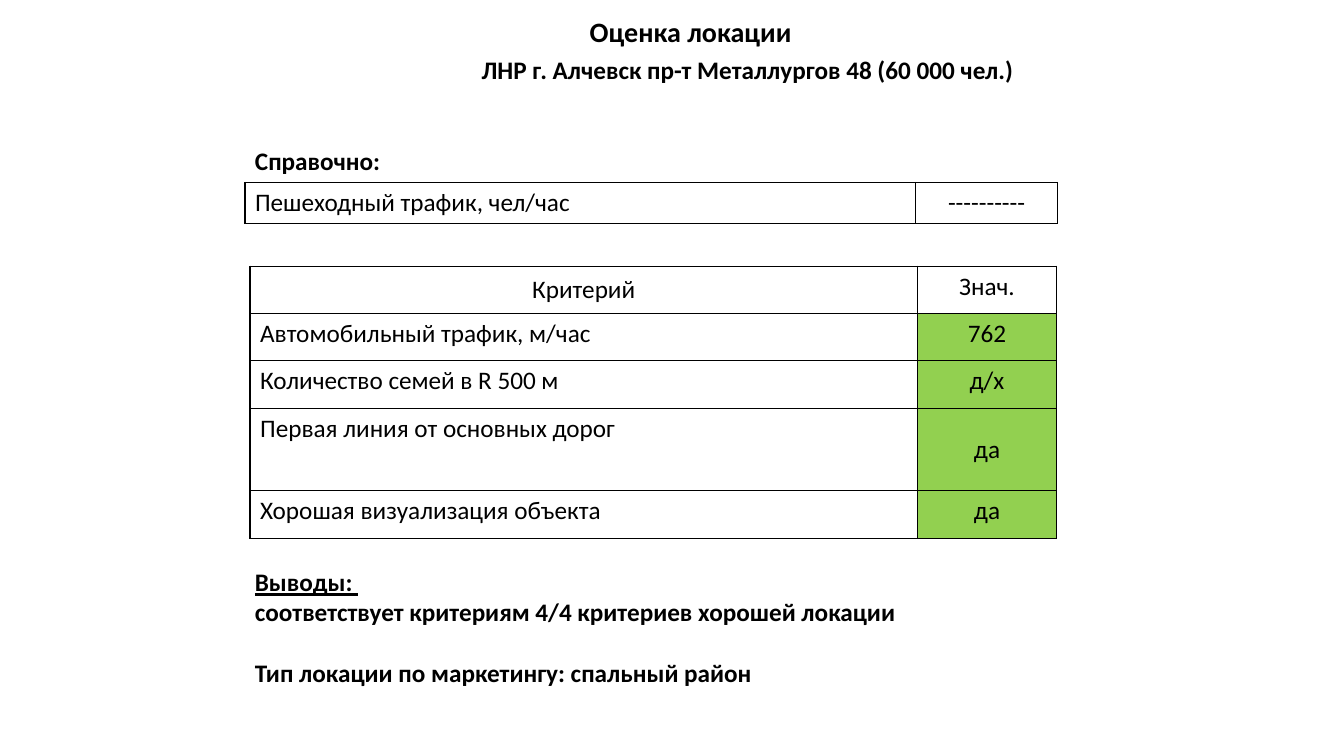
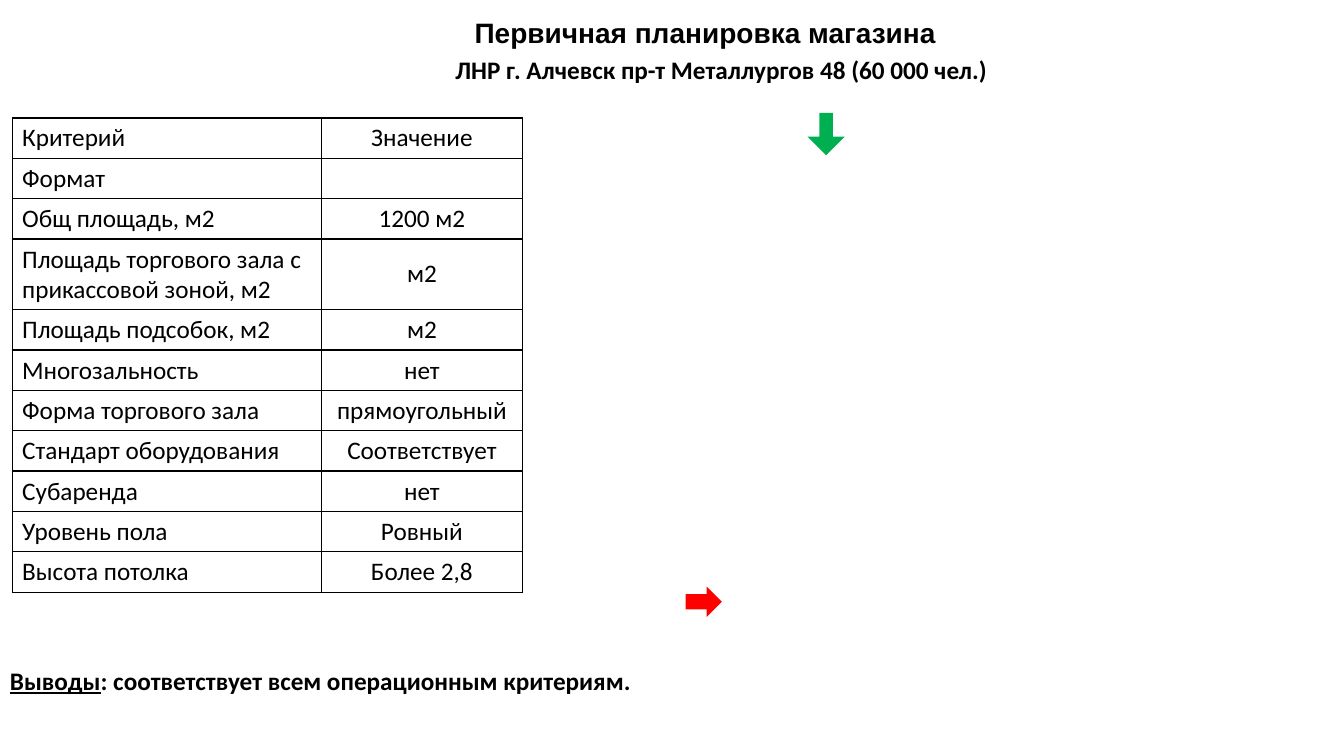
from pptx import Presentation
from pptx.dml.color import RGBColor
from pptx.enum import shapes, text
from pptx.oxml import parse_xml
from pptx.oxml.ns import nsdecls
from pptx.util import Inches, Pt

BLACK = RGBColor(0x00, 0x00, 0x00)
LIME = RGBColor(0x92, 0xD0, 0x50)
GREEN = RGBColor(0x00, 0xB0, 0x50)
RED = RGBColor(0xFF, 0x00, 0x00)
LEFT, CENTER, RIGHT = text.PP_ALIGN.LEFT, text.PP_ALIGN.CENTER, text.PP_ALIGN.RIGHT
TOP, MIDDLE = text.MSO_ANCHOR.TOP, text.MSO_ANCHOR.MIDDLE
BODY = {"name": "Calibri", "size": Pt(18), "bold": False}
STRONG = {**BODY, "bold": True}
UNDERLINED = {**STRONG, "underline": True}
TITLE = {**STRONG, "size": Pt(20)}
ADDRESS = "ЛНР г. Алчевск пр-т Металлургов 48 (60 000 чел.)"


def add_run(p, words, style):
    r = p.add_run()
    r.text = words
    for name, value in style.items():
        setattr(r.font, name, value)
    r.font.color.rgb = BLACK


def add_text(s, box, paragraphs, align=LEFT):
    tf = s.shapes.add_textbox(*map(Inches, box)).text_frame
    tf.word_wrap = True
    for i, (gap, runs) in enumerate(paragraphs):
        p = tf.add_paragraph() if i else tf.paragraphs[0]
        p.alignment = align
        p.space_before = Pt(gap)
        for words, style in runs:
            add_run(p, words, style)


def add_heading(s, box, words, font, address_left):
    title = s.shapes.title
    title.left, title.top, title.width, title.height = map(Inches, box)
    tf = title.text_frame
    tf.word_wrap = True
    tf.auto_size = text.MSO_AUTO_SIZE.NONE
    tf.vertical_anchor = TOP
    p = tf.paragraphs[0]
    p.alignment = CENTER
    add_run(p, words, {**TITLE, "name": font})
    add_text(s, (address_left, 0.49, 5.98, 0.4), [(0, [(ADDRESS, STRONG)])], RIGHT)


def add_borders(cell):
    tc_pr = cell._tc.get_or_add_tcPr()
    for side in "LRTB":
        tc_pr.append(parse_xml(
            f'<a:ln{side} w="12700" {nsdecls("a")}><a:solidFill>'
            f'<a:srgbClr val="{BLACK}"/></a:solidFill></a:ln{side}>'))


def add_grid(s, left, top, widths, heights, rows, middle=(), header_align=LEFT, value_fill=None):
    box = (left, top, sum(widths), sum(heights))
    table = s.shapes.add_table(len(rows), len(widths), *map(Inches, box)).table
    table.first_row = table.horz_banding = False
    for column, width in zip(table.columns, widths):
        column.width = Inches(width)
    for i, (row, height) in enumerate(zip(rows, heights)):
        table.rows[i].height = Inches(height)
        for j, words in enumerate(row):
            cell = table.cell(i, j)
            add_borders(cell)
            cell.fill.background()
            if value_fill and i and j:
                cell.fill.solid()
                cell.fill.fore_color.rgb = value_fill
            cell.vertical_anchor = MIDDLE if (i, j) in middle else TOP
            p = cell.text_frame.paragraphs[0]
            p.alignment = CENTER if j else LEFT if i else header_align
            if words:
                add_run(p, words, BODY)


def add_arrow(s, kind, box, color, shaft=0.5):
    sp = s.shapes.add_shape(kind, *map(Inches, box))
    sp.shadow.inherit = False
    sp.adjustments[0] = shaft
    sp.fill.solid()
    sp.fill.fore_color.rgb = color
    sp.line.fill.background()


def location_slide(s):
    add_heading(s, (5.06, 0.09, 3.58, 0.44), "Оценка локации", "Calibri", 4.17)
    add_text(s, (2.43, 1.39, 5.05, 0.4), [(0, [("Справочно:", STRONG)])])
    add_grid(s, 2.43, 1.81, (6.65, 1.41), (0.41,),
             [("Пешеходный трафик, чел/час", "----------")])
    criteria = [
        ("Критерий", "Знач."),
        ("Автомобильный трафик, м/час", "762"),
        ("Количество семей в R 500 м", "д/х"),
        ("Первая линия от основных дорог", "да"),
        ("Хорошая визуализация объекта", "да"),
    ]
    add_grid(s, 2.48, 2.64, (6.62, 1.38), (0.47, 0.47, 0.47, 0.82, 0.47), criteria,
             middle={(0, 0), (3, 1)}, header_align=CENTER, value_fill=LIME)
    add_text(s, (2.43, 5.57, 10.5, 1.32), [
        (0, [("Выводы: ", UNDERLINED)]),
        (0, [("соответствует критериям 4/4 критериев хорошей локации", STRONG)]),
        (22, [("Тип локации по маркетингу: спальный район", STRONG)]),
    ])


def layout_slide(s):
    add_heading(s, (3.66, 0.1, 6.67, 0.44), "Первичная планировка магазина", "Arial", 3.91)
    criteria = [
        ("Критерий", "Значение"),
        ("Формат", ""),
        ("Общ площадь, м2", "1200 м2"),
        ("Площадь торгового зала с прикассовой зоной, м2", "м2"),
        ("Площадь подсобок, м2", "м2"),
        ("Многозальность", "нет"),
        ("Форма торгового зала", "прямоугольный"),
        ("Стандарт оборудования", "Соответствует"),
        ("Субаренда", "нет"),
        ("Уровень пола", "Ровный"),
        ("Высота потолка", "Более 2,8"),
    ]
    heights = [0.69 if i == 3 else 0.4 for i in range(len(criteria))]
    add_grid(s, 0.12, 1.17, (3.07, 1.99), heights, criteria, middle={(3, 1)})
    add_arrow(s, shapes.MSO_SHAPE.RIGHT_ARROW, (6.8, 5.82, 0.36, 0.3), RED)
    add_arrow(s, shapes.MSO_SHAPE.DOWN_ARROW, (8.01, 1.12, 0.37, 0.42), GREEN, 0.36)
    add_text(s, (0, 6.55, 6.79, 0.4), [
        (0, [("Выводы", UNDERLINED), (": соответствует всем операционным критериям.", STRONG)]),
    ])


def main():
    prs = Presentation()
    prs.slide_width, prs.slide_height = Inches(13.33), Inches(7.5)
    for build in (location_slide, layout_slide):
        build(prs.slides.add_slide(prs.slide_layouts[5]))
    prs.save("out.pptx")


if __name__ == "__main__":
    main()
